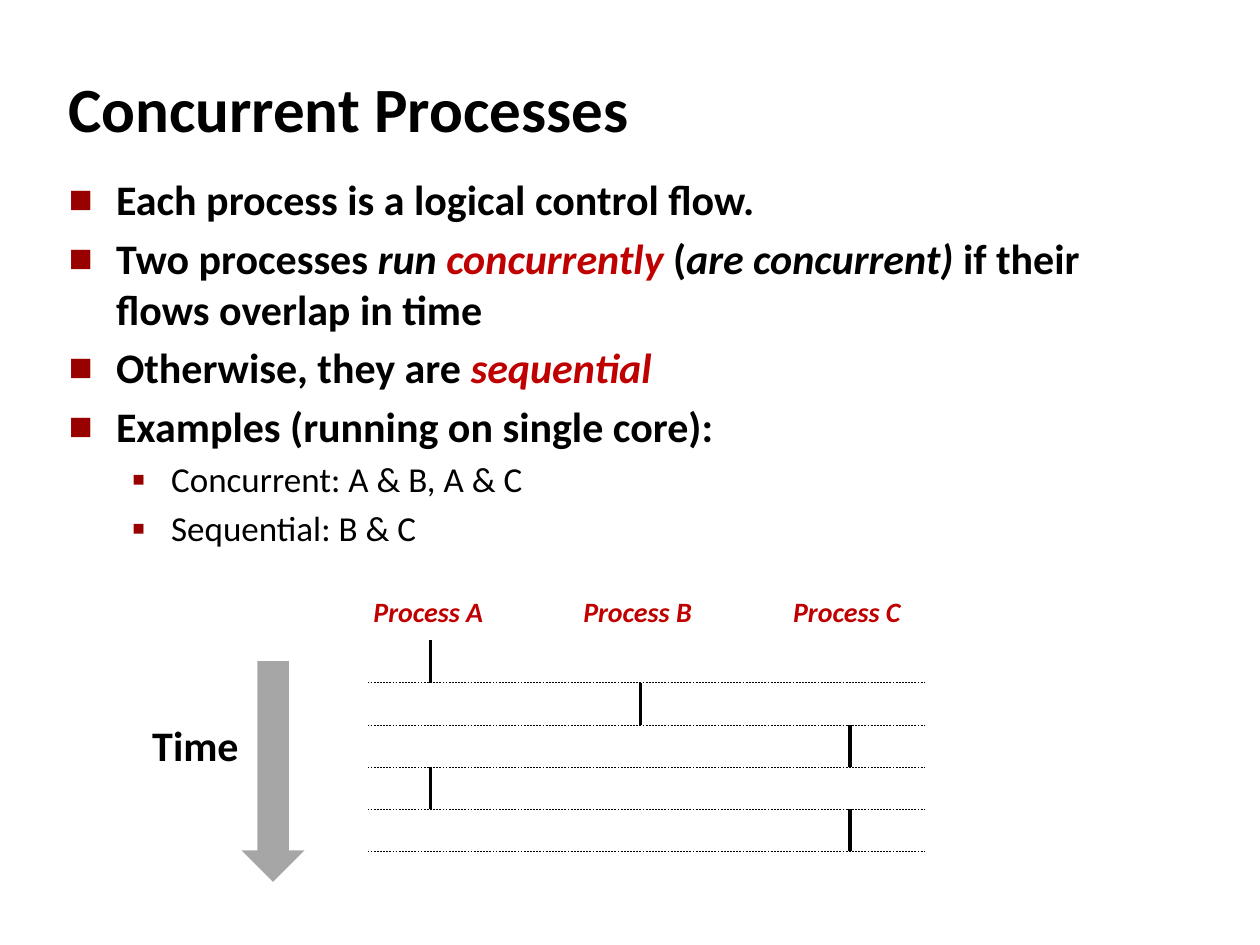
import pptx
import pptx.dml.color
import pptx.enum.dml
import pptx.enum.shapes
import pptx.enum.text
import pptx.oxml
import pptx.oxml.ns
import pptx.util
from pptx.util import Cm

FONT = "Calibri"
BLACK, RED, MAROON, GREY = "000000", "C00000", "990000", "A6A6A6"

# Each run is its text, then its format where that differs from the level's.
POINTS = [
    (0, [("Each process is a logical control flow.", {})]),
    (0, [("Two processes ", {}), ("run ", {"italic": True}),
         ("concurrently", {"italic": True, "color": RED}), (" (", {}),
         ("are concurrent)", {"italic": True}),
         (" if their flows overlap in time", {})]),
    (0, [("Otherwise, they are ", {}),
         ("sequential", {"italic": True, "color": RED})]),
    (0, [("Examples (running on single core):", {})]),
    (1, [("Concurrent: A & B, A & C", {})]),
    (1, [("Sequential: B & C", {})]),
]
# Per level: size, bold, left margin, hanging indent, bullet, bullet percent
LEVELS = [(24, True, 0.95, 0.95, "■", 60), (20, False, 2.06, 0.79, "▪", 110)]

NAMES = "ABC"
TURNS = "ABCAC"
TOP, ROW = 12.91, 0.85
LEFT, COL = 8.68, 4.23


def rgb(code):
    return pptx.dml.color.RGBColor.from_string(code)


def add_run(par, text, size=24, bold=True, italic=False, color=BLACK):
    run = par.add_run()
    run.text = text
    font = run.font
    font.name, font.size = FONT, pptx.util.Pt(size)
    font.bold, font.italic = bold, italic
    font.color.rgb = rgb(color)


def place(shape, x, y, w, h):
    shape.left, shape.top, shape.width, shape.height = map(Cm, (x, y, w, h))


def set_indent(par, left, hang):
    props = par._p.get_or_add_pPr()
    props.set("marL", str(Cm(left)))
    props.set("indent", str(-Cm(hang)))
    return props


def add_bullet(props, char, share):
    space = pptx.oxml.ns.nsdecls("a")
    for xml in (
        f'<a:buClr {space}><a:srgbClr val="{MAROON}"/></a:buClr>',
        f'<a:buSzPct {space} val="{share * 1000}"/>',
        f'<a:buFont {space} typeface="{FONT}"/>',
        f'<a:buChar {space} char="{char}"/>',
    ):
        props.append(pptx.oxml.parse_xml(xml))


def add_title(slide, text):
    title = slide.shapes.title
    place(title, 1.12, 1.37, 16.87, 1.6)
    frame = title.text_frame
    frame.auto_size = pptx.enum.text.MSO_AUTO_SIZE.NONE
    frame.vertical_anchor = pptx.enum.text.MSO_ANCHOR.MIDDLE
    par = frame.paragraphs[0]
    par.alignment = pptx.enum.text.PP_ALIGN.LEFT
    set_indent(par, 0.33, 0.33)
    add_run(par, text, size=36)


def add_points(slide):
    box = slide.shapes.add_textbox(Cm(1.14), Cm(3.38), Cm(21.95), Cm(7.19))
    frame = box.text_frame
    frame.word_wrap = True
    for i, (level, runs) in enumerate(POINTS):
        size, bold, left, hang, char, share = LEVELS[level]
        par = frame.add_paragraph() if i else frame.paragraphs[0]
        par.level = level
        par.space_before = pptx.util.Pt(size * 0.2)
        add_bullet(set_indent(par, left, hang), char, share)
        for text, style in runs:
            add_run(par, text, size=size, bold=bold, **style)


def add_label(slide, text, x, y, w, h, **style):
    box = slide.shapes.add_textbox(Cm(x), Cm(y), Cm(w), Cm(h))
    box.text_frame.word_wrap = False
    add_run(box.text_frame.paragraphs[0], text, **style)


def add_line(slide, x1, y1, x2, y2, width, dash=None):
    line = slide.shapes.add_connector(
        pptx.enum.shapes.MSO_CONNECTOR.STRAIGHT, Cm(x1), Cm(y1), Cm(x2), Cm(y2))
    line.line.color.rgb = rgb(BLACK)
    line.line.width = pptx.util.Pt(width)
    line.line.dash_style = dash
    props = line._element.spPr
    props.append(pptx.oxml.parse_xml(
        f'<a:effectLst {pptx.oxml.ns.nsdecls("a")}/>'))


def add_chart(slide):
    """Draw which process runs in each time slot."""
    for i, name in enumerate(NAMES):
        add_label(slide, f"Process {name}", 7.28 + i * COL, 11.86, 2.76, 0.94,
                  size=16, italic=True, color=RED)
    for i, name in enumerate(TURNS):
        x = LEFT + NAMES.index(name) * COL
        start, end = TOP + i * ROW, TOP + (i + 1) * ROW
        add_line(slide, x, start, x, end, 2)
        add_line(slide, 7.41, end, 18.63, end, 0.25,
                 pptx.enum.dml.MSO_LINE.DASH)


def add_time(slide):
    add_label(slide, "Time", 2.82, 14.38, 2.26, 1.27)
    arrow = slide.shapes.add_shape(
        pptx.enum.shapes.MSO_SHAPE.DOWN_ARROW,
        Cm(4.87), Cm(13.33), Cm(1.27), Cm(4.45))
    arrow.shadow.inherit = False
    arrow.fill.solid()
    arrow.fill.fore_color.rgb = rgb(GREY)
    arrow.line.fill.background()


def main():
    deck = pptx.Presentation()
    deck.slide_width, deck.slide_height = Cm(25.4), Cm(19.05)
    slide = deck.slides.add_slide(deck.slide_layouts[5])
    add_title(slide, "Concurrent Processes")
    add_points(slide)
    add_chart(slide)
    add_time(slide)
    deck.save("out.pptx")


if __name__ == "__main__":
    main()
